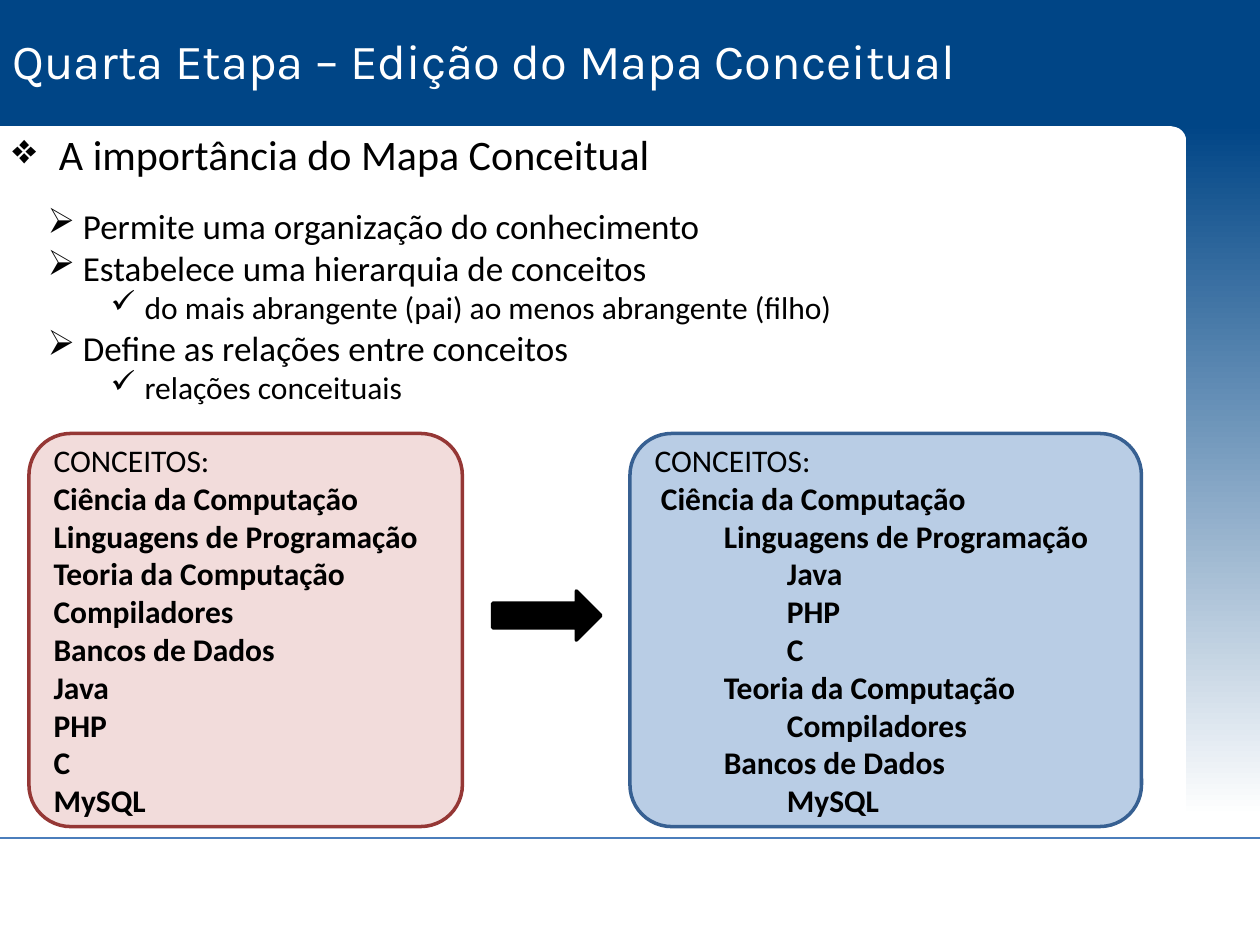
"""Builds the slide on editing a concept map."""
from lxml import etree
from pptx import Presentation
from pptx.dml.color import RGBColor
from pptx.enum.shapes import MSO_CONNECTOR, MSO_SHAPE
from pptx.enum.text import MSO_ANCHOR, PP_ALIGN
from pptx.oxml.ns import qn
from pptx.util import Inches, Pt

RECT, PLAQUE = MSO_SHAPE.RECTANGLE, MSO_SHAPE.PLAQUE
ROUND, ARROW = MSO_SHAPE.ROUNDED_RECTANGLE, MSO_SHAPE.RIGHT_ARROW
STRAIGHT, LEFT = MSO_CONNECTOR.STRAIGHT, PP_ALIGN.LEFT
TOP, MIDDLE = MSO_ANCHOR.TOP, MSO_ANCHOR.MIDDLE

TITLE = "Quarta Etapa – Edição do Mapa Conceitual"
POINTS = [
    (0, "A importância do Mapa Conceitual"),
    (1, "Permite uma organização do conhecimento"),
    (1, "Estabelece uma hierarquia de conceitos"),
    (2, "do mais abrangente (pai) ao menos abrangente (filho)"),
    (1, "Define as relações entre conceitos"),
    (2, "relações conceituais"),
]
HEAD = "CONCEITOS:"
FLAT = [(0, name) for name in (
    "Ciência da Computação", "Linguagens de Programação",
    "Teoria da Computação", "Compiladores", "Bancos de Dados",
    "Java", "PHP", "C", "MySQL")]
TREE = [
    (0, "Ciência da Computação"),
    (1, "Linguagens de Programação"),
    (2, "Java"),
    (2, "PHP"),
    (2, "C"),
    (1, "Teoria da Computação"),
    (2, "Compiladores"),
    (1, "Bancos de Dados"),
    (2, "MySQL"),
]
THEME = {
    "navy": "004586", "white": "FFFFFF", "black": "000000", "rule": "4B7EBC",
    "pink": "F2DCDB", "red": "953735", "sky": "B9CDE5", "blue": "376092",
    "body": "Calibri", "display": "Karla", "title": 28, "list": 18,
    "points": (24, 20, 18),
}
# level: bullet, left margin, hanging indent
MARKS = [("❖", 0.37, 0.37), ("➢", 0.56, 0.28), ("✓", 1.05, 0.27)]
CARDS = [
    (0.23, 3.44, FLAT, 0, "pink", "red"),
    (5, 4.06, TREE, 0.05, "sky", "blue"),
]


def tint(name):
    return RGBColor.from_string(THEME[name])


def add_form(slide, kind, place, fill, line=None):
    form = slide.shapes.add_shape(kind, *map(Inches, place))
    form.shadow.inherit = False
    form.fill.solid()
    form.fill.fore_color.rgb = tint(fill)
    if line:
        form.line.color.rgb = tint(line)
        form.line.width = Pt(2)
    else:
        form.line.fill.background()
    return form


def add_box(slide, place):
    frame = slide.shapes.add_textbox(*map(Inches, place)).text_frame
    frame.word_wrap = True
    return frame


def add_line(frame, text, size, color="black", face="body", bold=False,
             left=0, hang=0, mark=None):
    first = frame.paragraphs[0]
    para = frame.add_paragraph() if first.runs else first
    para.alignment = LEFT
    props = para._p.get_or_add_pPr()
    props.set("marL", str(Inches(left)))
    props.set("indent", str(-Inches(hang)))
    if mark:
        etree.SubElement(props, qn("a:buChar")).set("char", mark)
    run = para.add_run()
    run.text = text
    font = run.font
    font.name, font.size, font.bold = THEME[face], Pt(size), bold
    font.color.rgb = tint(color)
    return para


def add_frame(slide):
    rule = slide.shapes.add_connector(
        STRAIGHT, *map(Inches, (0, 6.65, 10, 6.65)))
    rule.line.color.rgb = tint("rule")
    rule.line.width = Pt(0.75)
    etree.SubElement(rule._element.spPr, qn("a:effectLst"))
    add_form(slide, RECT, (0, 0, 10, 1), "navy")
    notch = add_form(slide, PLAQUE, (9.3, 0.28, 0.7, 0.84), "navy")
    notch.adjustments[0] = 0.167
    side = add_form(slide, RECT, (9.41, 0.98, 0.59, 5.5), "navy")
    side.fill.gradient()
    side.fill.gradient_angle = 270
    for stop, name, spot in zip(
            side.fill.gradient_stops, ("navy", "white"), (0, 1)):
        stop.color.rgb = tint(name)
        stop.position = spot


def add_points(slide):
    frame = add_box(slide, (0, 0.97, 9.3, 2.36))
    for rank, (level, text) in enumerate(POINTS):
        mark, left, hang = MARKS[level]
        para = add_line(frame, text, THEME["points"][level],
                        left=left, hang=hang, mark=mark)
        para.level = level
        if rank == 1:
            para.space_before = Pt(14.6)


def add_card(slide, left, width, items, pad, fill, line):
    card = add_form(slide, ROUND, (left, 3.44, width, 3.12), fill, line)
    card.adjustments[0] = 0.106
    frame = card.text_frame
    frame.word_wrap = True
    frame.vertical_anchor = MIDDLE
    add_line(frame, HEAD, THEME["list"])
    for level, text in items:
        para = add_line(frame, text, THEME["list"], bold=True,
                        left=pad + level * 0.5)
        para.level = level


def main():
    deck = Presentation()
    deck.slide_width, deck.slide_height = Inches(10), Inches(7.5)
    slide = deck.slides.add_slide(deck.slide_layouts[6])
    add_frame(slide)
    add_points(slide)
    for card in CARDS:
        add_card(slide, *card)
    add_form(slide, ARROW, (3.91, 4.69, 0.86, 0.39), "black", "black")
    frame = add_box(slide, (0, 0.23, 10, 0.63))
    frame.vertical_anchor = TOP
    para = add_line(frame, TITLE, THEME["title"], "white", "display")
    para.line_spacing = 0.95
    deck.save("out.pptx")


if __name__ == "__main__":
    main()
